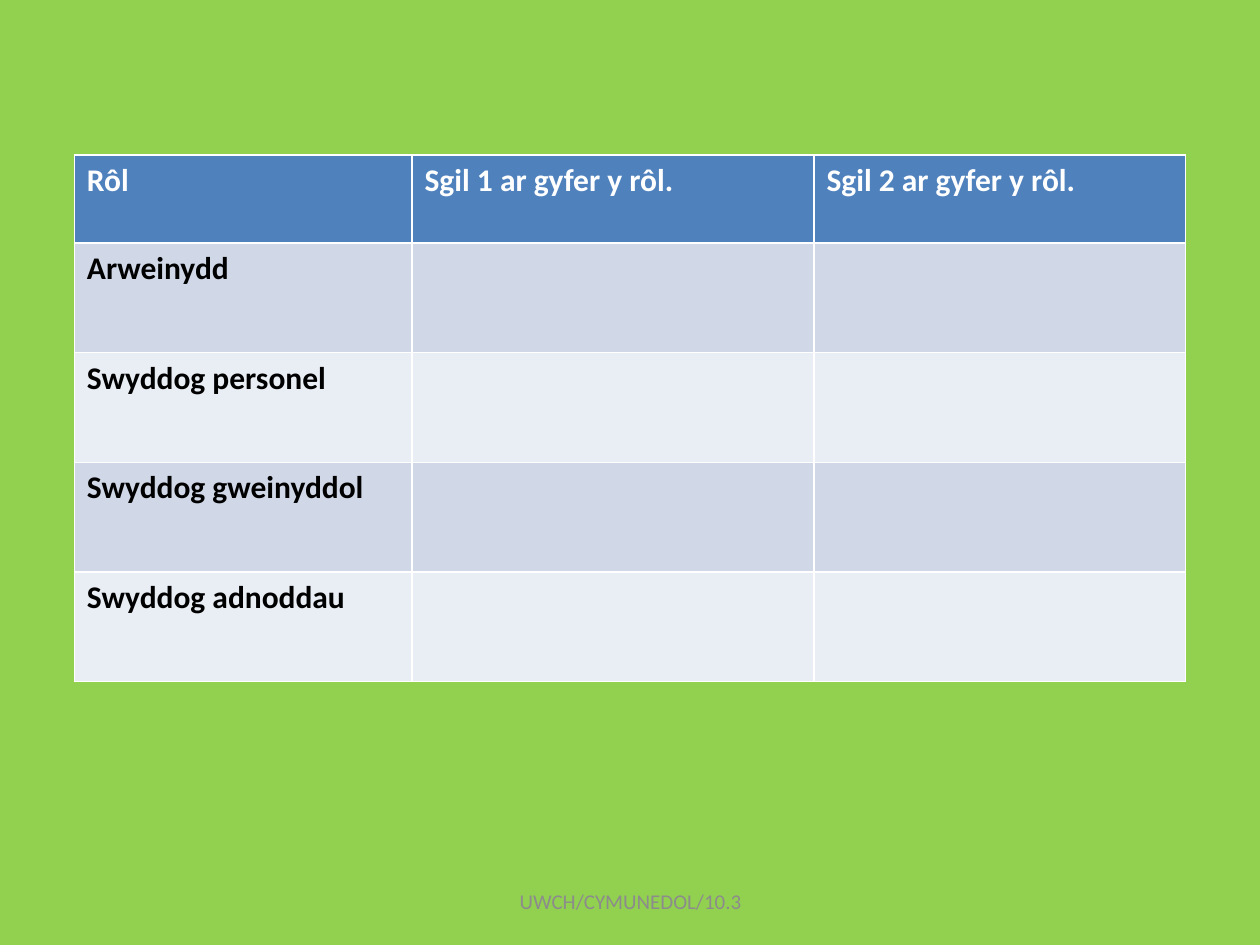
from pptx import Presentation
from pptx.dml.color import RGBColor
from pptx.enum.text import MSO_ANCHOR, PP_ALIGN
from pptx.util import Inches, Pt

# Content
HEADINGS = ["Rôl", "Sgil 1 ar gyfer y rôl.", "Sgil 2 ar gyfer y rôl."]
ROLES = ["Arweinydd", "Swyddog personel", "Swyddog gweinyddol", "Swyddog adnoddau"]
FOOTER = "UWCH/CYMUNEDOL/10.3"

# Layout and colours
COLUMN_WIDTHS = [2.68, 3.19, 2.95]
HEADER_HEIGHT, ROLE_HEIGHT = 0.7, 0.87
GREEN, BLUE, GREY = "92D050", "4F81BD", "8C8C8C"
BANDS = ["D0D8E8", "E9EDF4"]


def paint(fill, color):
    fill.solid()
    fill.fore_color.rgb = RGBColor.from_string(color)


def write(frame, text, size, color, bold=False):
    frame.text = text
    for span in frame.paragraphs[0].runs:
        span.font.name = "Calibri"
        span.font.size = Pt(size)
        span.font.bold = bold
        span.font.color.rgb = RGBColor.from_string(color)


def add_role_table(page):
    rows = [HEADINGS] + [[role, "", ""] for role in ROLES]
    heights = [HEADER_HEIGHT] + [ROLE_HEIGHT] * len(ROLES)
    # The default table style supplies the white grid lines
    table = page.shapes.add_table(
        len(rows), len(HEADINGS), Inches(0.59), Inches(1.23),
        Inches(sum(COLUMN_WIDTHS)), Inches(sum(heights))).table
    for column, width in zip(table.columns, COLUMN_WIDTHS):
        column.width = Inches(width)
    for index, (texts, height) in enumerate(zip(rows, heights)):
        table.rows[index].height = Inches(height)
        header = index == 0
        fill = BLUE if header else BANDS[(index - 1) % 2]
        for cell, text in zip(table.rows[index].cells, texts):
            paint(cell.fill, fill)
            write(cell.text_frame, text, 18, "FFFFFF" if header else "000000", True)


def add_footer(page):
    box = page.shapes.add_textbox(Inches(3.42), Inches(6.95), Inches(3.17), Inches(0.4))
    frame = box.text_frame
    frame.word_wrap = True
    frame.vertical_anchor = MSO_ANCHOR.MIDDLE
    write(frame, FOOTER, 12, GREY)
    frame.paragraphs[0].alignment = PP_ALIGN.CENTER


def main():
    deck = Presentation()
    deck.slide_width, deck.slide_height = Inches(10), Inches(7.5)
    page = deck.slides.add_slide(deck.slide_layouts[6])
    paint(page.background.fill, GREEN)
    add_role_table(page)
    add_footer(page)
    deck.save("out.pptx")


if __name__ == "__main__":
    main()
